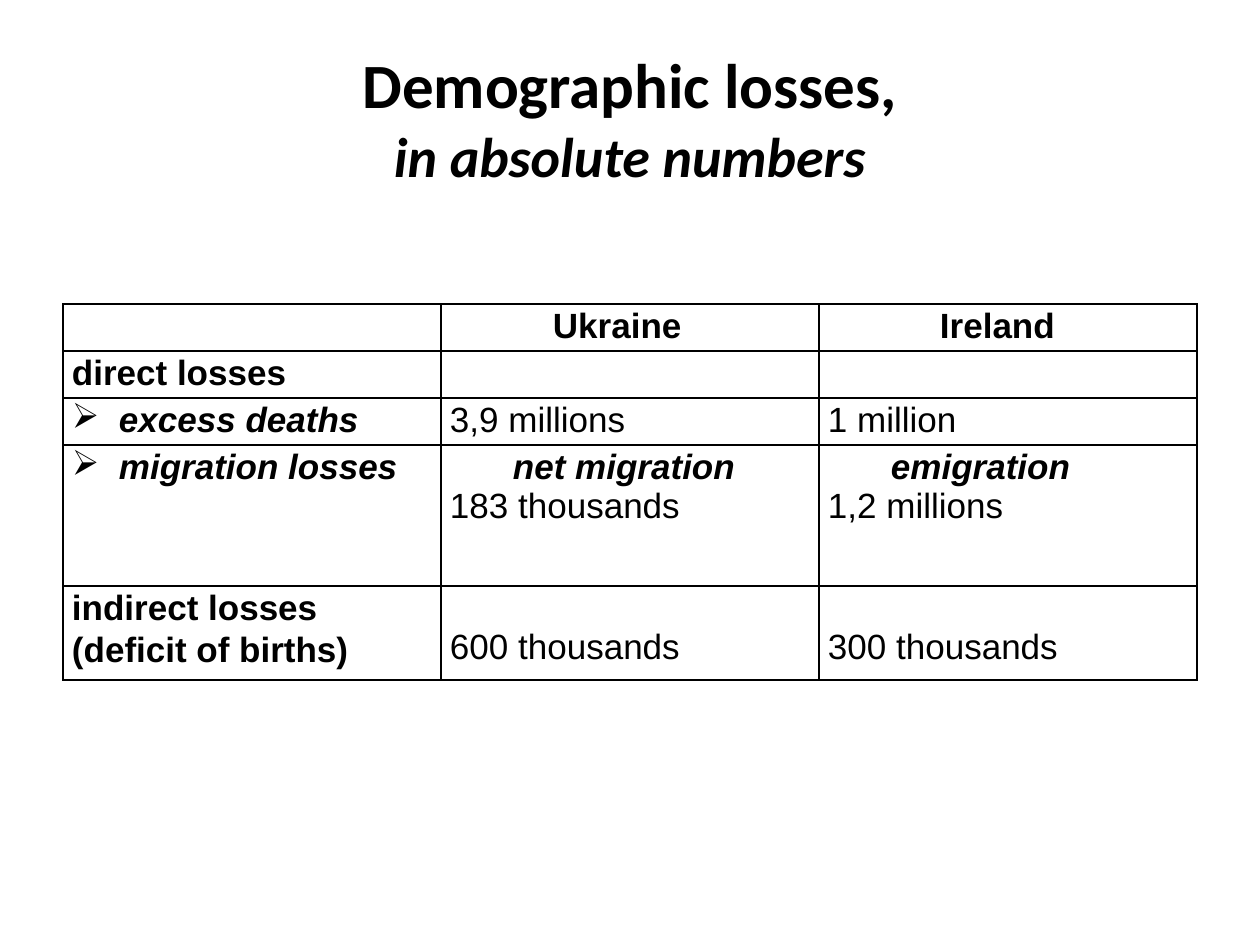
from dataclasses import dataclass

from lxml import etree
from pptx import Presentation
from pptx.dml.color import RGBColor
from pptx.enum.text import MSO_ANCHOR, PP_ALIGN
from pptx.oxml.ns import qn
from pptx.util import Emu, Pt

CENTER = PP_ALIGN.CENTER
MIDDLE = MSO_ANCHOR.MIDDLE
TITLE_ONLY = 5
EMU_PER_PX = 914400 / 126


@dataclass(frozen=True)
class Theme:
    """Colours, fonts and sizes of the slide."""
    ink: str = "000000"
    title_font: str = "Calibri"
    table_font: str = "Arial"
    title_size: int = 36
    subtitle_size: int = 32
    table_size: int = 20
    border: int = 1
    line_spacing: float = 1.07


@dataclass(frozen=True)
class Line:
    """One paragraph of a table cell."""
    text: str
    bold: bool = False
    italic: bool = False
    indent: int = 0
    bullet: str = ""
    spacing: float = 1.07


THEME = Theme()
INSET = 9
BULLET_INDENT = 47
SUBHEAD_INDENT = 63
SECOND_LINE = 39
ROW_HEIGHTS = [47, 47, 47, 141, 94]


def heading(text, indent=0):
    """Return a bold line."""
    return [Line(text, bold=True, indent=indent)]


def bullet_item(text):
    """Return a bold italic line with an arrow bullet."""
    return [Line(text, True, True, BULLET_INDENT, "➢")]


def migration(label, value):
    """Return an indented label over its value."""
    return [Line(label, True, True, SUBHEAD_INDENT), Line(value, spacing=1.0)]


ROWS = [
    [[], heading("Ukraine", 103), heading("Ireland", 112)],
    [heading("direct losses"), [], []],
    [bullet_item("excess deaths"), [Line("3,9 millions")], [Line("1 million")]],
    [bullet_item("migration losses"),
     migration("net migration", "183 thousands"),
     migration("emigration", "1,2 millions")],
    [heading("indirect losses (deficit of births)"),
     [Line("600 thousands")], [Line("300 thousands")]],
]


def px(length):
    """Turn pixels into EMU."""
    return Emu(round(length * EMU_PER_PX))


def add_run(paragraph, text, font, size, bold, italic):
    """Add one formatted run."""
    run = paragraph.add_run()
    run.text = text
    run.font.name = font
    run.font.size = Pt(size)
    run.font.bold = bold
    run.font.italic = italic
    run.font.color.rgb = RGBColor.from_string(THEME.ink)


def place_title(slide, left, top, width, height):
    """Fill the title placeholder with a title and a subtitle line."""
    title = slide.shapes.title
    title.left, title.top = px(left), px(top)
    title.width, title.height = px(width), px(height)
    title.text_frame.vertical_anchor = MIDDLE
    paragraph = title.text_frame.paragraphs[0]
    paragraph.alignment = CENTER
    add_run(paragraph, "Demographic losses,", THEME.title_font, THEME.title_size, True, False)
    paragraph.add_line_break()
    add_run(paragraph, "in absolute numbers", THEME.title_font, THEME.subtitle_size, True, True)


def draw_borders(cell):
    """Give a cell four solid borders and no fill."""
    properties = cell._tc.get_or_add_tcPr()
    for side in ("a:lnL", "a:lnR", "a:lnT", "a:lnB"):
        line = etree.SubElement(properties, qn(side), w=str(Pt(THEME.border)))
        fill = etree.SubElement(line, qn("a:solidFill"))
        etree.SubElement(fill, qn("a:srgbClr"), val=THEME.ink)
    cell.fill.background()


def write_line(paragraph, line):
    """Write one line with its indent and bullet."""
    paragraph.line_spacing = line.spacing
    properties = paragraph._p.get_or_add_pPr()
    properties.set("marL", str(px(line.indent)))
    properties.set("indent", str(px(-line.indent if line.bullet else 0)))
    if line.bullet:
        etree.SubElement(properties, qn("a:buChar"), char=line.bullet)
    add_run(paragraph, line.text, THEME.table_font, THEME.table_size, line.bold, line.italic)


def fill_cell(cell, lines, top_margin):
    """Set the margins, borders and text of a cell."""
    cell.margin_left = cell.margin_right = px(INSET)
    cell.margin_top, cell.margin_bottom = px(top_margin), 0
    draw_borders(cell)
    frame = cell.text_frame
    for index, line in enumerate(lines):
        write_line(frame.add_paragraph() if index else frame.paragraphs[0], line)


def place_table(slide, left, top, width):
    """Add the table of losses with equal columns."""
    height = sum(ROW_HEIGHTS)
    columns = len(ROWS[0])
    shape = slide.shapes.add_table(len(ROWS), columns, px(left), px(top), px(width), px(height))
    table = shape.table
    table.first_row = table.horz_banding = False
    for column in table.columns:
        column.width = px(width // columns)
    for row_index, (row, row_height) in enumerate(zip(ROWS, ROW_HEIGHTS)):
        table.rows[row_index].height = px(row_height)
        is_last = row_index == len(ROWS) - 1
        for column_index, lines in enumerate(row):
            top_margin = SECOND_LINE if is_last and column_index else 0
            fill_cell(table.cell(row_index, column_index), lines, top_margin)


def main():
    """Build and save the slide."""
    presentation = Presentation()
    presentation.slide_width, presentation.slide_height = px(1260), px(945)
    slide = presentation.slides.add_slide(presentation.slide_layouts[TITLE_ONLY])
    place_title(slide, 63, 38, 1134, 158)
    place_table(slide, 63, 304, 1134)
    presentation.save("out.pptx")


if __name__ == "__main__":
    main()
